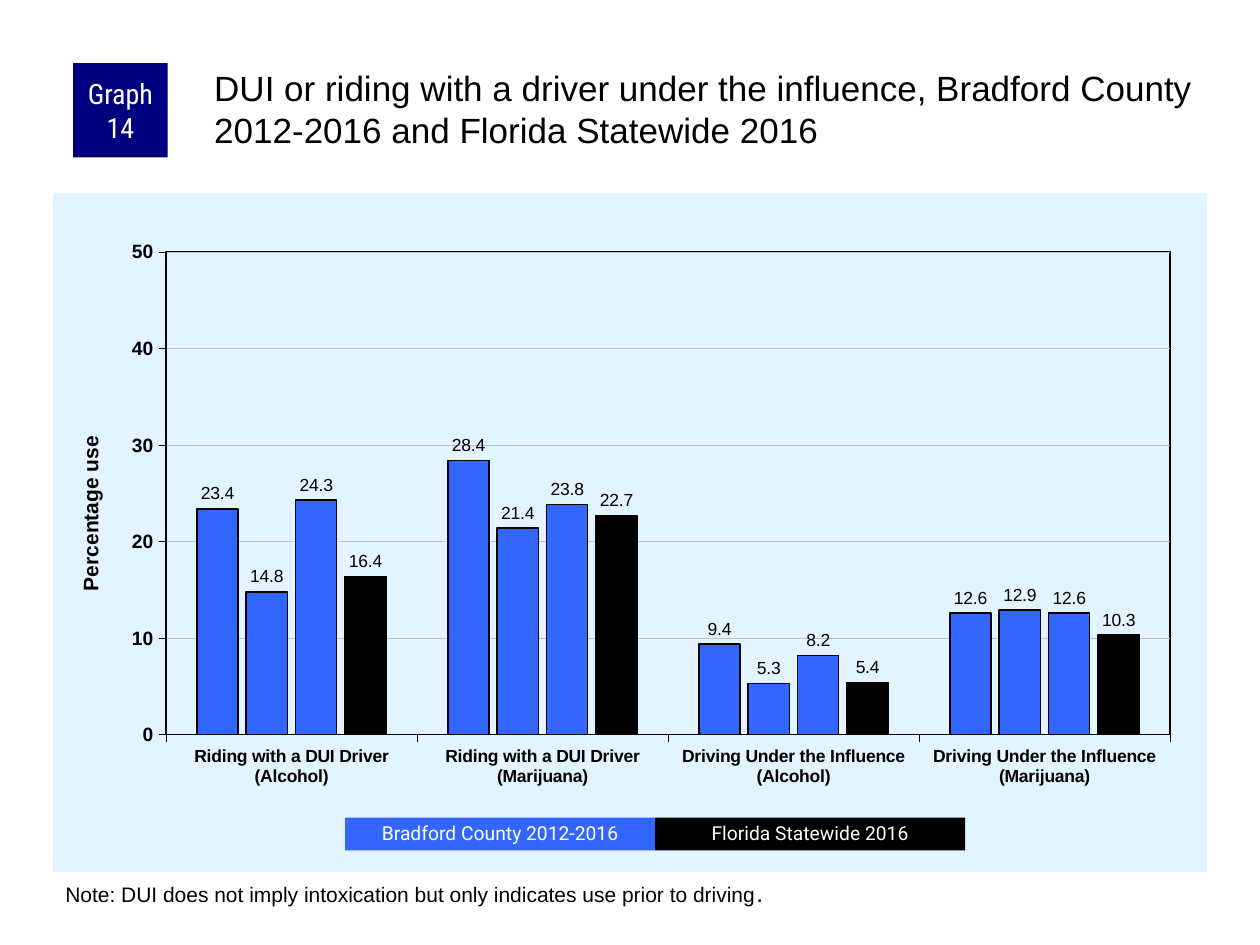
from dataclasses import dataclass

from lxml import etree
from pptx import Presentation
from pptx import util as u
from pptx.chart.data import CategoryChartData
from pptx.dml.color import RGBColor
from pptx.enum import chart as charts, shapes, text
from pptx.oxml import ns, parse_xml


@dataclass(frozen=True)
class Theme:
    panel: str = "E1F4FF"
    county: str = "3366FF"
    ink: str = "000000"
    badge: str = "000080"
    paper: str = "FFFFFF"
    grid: str = "C0C0C0"
    body_font: str = "Arial"
    badge_font: str = "Roboto Condensed"
    legend_font: str = "Roboto"
    title_size: float = 20
    badge_size: float = 16
    note_size: float = 12
    note_stop_size: float = 14
    legend_size: float = 11
    chart_size: float = 11.5
    axis_title_size: float = 12
    value_axis_size: float = 11
    label_size: float = 10


THEME = Theme()


@dataclass(frozen=True)
class Series:
    values: tuple
    color: str
    outline: float


@dataclass(frozen=True)
class Block:
    caption: str
    box: tuple
    fill: str
    font: str
    size: float
    margins: tuple = (0.1, 0.05)
    line_spacing: float = 1.0


CATEGORIES = (
    "Riding with a DUI Driver (Alcohol)",
    "Riding with a DUI Driver (Marijuana)",
    "Driving Under the Influence (Alcohol)",
    "Driving Under the Influence (Marijuana)",
)
SERIES = (
    Series((23.4, 28.4, 9.4, 12.6), THEME.county, 1),
    Series((14.8, 21.4, 5.3, 12.9), THEME.county, 1),
    Series((24.3, 23.8, 8.2, 12.6), THEME.county, 0.75),
    Series((16.4, 22.7, 5.4, 10.3), THEME.ink, 0.75),
)
LEGEND = (("Bradford County 2012-2016", THEME.county), ("Florida Statewide 2016", THEME.ink))
LEGEND_LEFT, LEGEND_TOP, LEGEND_WIDTH, LEGEND_HEIGHT = 2.74, 6.49, 2.46, 0.26
PLOT = {"x": 0.098, "y": 0.087, "w": 0.87, "h": 0.711}


def rgb(color: str) -> RGBColor:
    return RGBColor.from_string(color)


def inches(box: tuple) -> list:
    return [u.Inches(length) for length in box]


def style_font(font, name: str, size: float, color: str, bold: bool = False) -> None:
    font.name, font.size, font.bold = name, u.Pt(size), bold
    font.color.rgb = rgb(color)


def style_line(line, color: str, width: float) -> None:
    line.color.rgb = rgb(color)
    line.width = u.Pt(width)


def set_margins(frame, left: float, top: float, right: float, bottom: float) -> None:
    frame.margin_left, frame.margin_top, frame.margin_right, frame.margin_bottom = inches(
        (left, top, right, bottom))


def add_block(slide, block: Block) -> None:
    """Draw a filled rectangle with a centred caption."""
    shape = slide.shapes.add_shape(shapes.MSO_SHAPE.RECTANGLE, *inches(block.box))
    shape.shadow.inherit = False
    shape.fill.solid()
    shape.fill.fore_color.rgb = rgb(block.fill)
    shape.line.fill.background()
    frame = shape.text_frame
    frame.word_wrap = True
    frame.vertical_anchor = text.MSO_ANCHOR.MIDDLE
    set_margins(frame, *block.margins, *block.margins)
    frame.text = block.caption
    paragraph = frame.paragraphs[0]
    paragraph.alignment = text.PP_ALIGN.CENTER
    paragraph.line_spacing = block.line_spacing
    style_font(paragraph.runs[0].font, block.font, block.size, THEME.paper)


def place_title(slide, caption: str) -> None:
    title = slide.shapes.title
    title.left, title.top, title.width, title.height = inches((1.67, 0.5, 7.92, 0.83))
    frame = title.text_frame
    frame.word_wrap = True
    frame.auto_size = text.MSO_AUTO_SIZE.NONE
    frame.vertical_anchor = text.MSO_ANCHOR.TOP
    set_margins(frame, 0.03, 0.03, 0, 0)
    frame.text = caption
    paragraph = frame.paragraphs[0]
    paragraph.alignment = text.PP_ALIGN.LEFT
    style_font(paragraph.runs[0].font, THEME.body_font, THEME.title_size, THEME.ink)


def add_note(slide, parts: tuple) -> None:
    box = slide.shapes.add_textbox(*inches((0.42, 6.92, 9.17, 0.34)))
    box.text_frame.word_wrap = True
    box.text_frame.auto_size = text.MSO_AUTO_SIZE.SHAPE_TO_FIT_TEXT
    for wording, size in parts:
        run = box.text_frame.paragraphs[0].add_run()
        run.text = wording
        style_font(run.font, THEME.body_font, size, THEME.ink)


def area_properties(fill: str, line: str):
    return parse_xml(f'<c:spPr {ns.nsdecls("c", "a")}>{fill}{line}</c:spPr>')


def format_chart_areas(chart) -> None:
    """Set the panel fill, the plot frame and the inner plot position."""
    chart_node = chart.element.find(ns.qn("c:chart"))
    plot_area = chart_node.find(ns.qn("c:plotArea"))
    solid = '<a:solidFill><a:srgbClr val="{}"/></a:solidFill>'
    chart_node.addnext(area_properties(solid.format(THEME.panel), "<a:ln><a:noFill/></a:ln>"))
    frame_line = f'<a:ln w="{u.Pt(0.75)}">{solid.format(THEME.ink)}</a:ln>'
    plot_area.append(area_properties("<a:noFill/>", frame_line))

    for layout in plot_area.findall(ns.qn("c:layout")):
        plot_area.remove(layout)
    layout = etree.Element(ns.qn("c:layout"))
    manual = etree.SubElement(layout, ns.qn("c:manualLayout"))
    settings = {"layoutTarget": "inner", "xMode": "edge", "yMode": "edge", **PLOT}
    for name, value in settings.items():
        etree.SubElement(manual, ns.qn(f"c:{name}")).set("val", str(value))
    plot_area.insert(0, layout)


def format_axis(axis, size: float) -> None:
    axis.major_tick_mark = charts.XL_TICK_MARK.OUTSIDE
    axis.minor_tick_mark = charts.XL_TICK_MARK.NONE
    style_font(axis.tick_labels.font, THEME.body_font, size, THEME.ink, bold=True)
    style_line(axis.format.line, THEME.ink, 0.25)


def add_usage_chart(slide) -> None:
    data = CategoryChartData(number_format="0.0")
    data.categories = CATEGORIES
    for number, series in enumerate(SERIES, start=1):
        data.add_series(f"Series {number}", series.values)
    chart = slide.shapes.add_chart(
        charts.XL_CHART_TYPE.COLUMN_CLUSTERED, *inches((0.42, 1.53, 9.16, 5.39)), data).chart
    chart.has_legend = chart.has_title = False
    style_font(chart.font, THEME.body_font, THEME.chart_size, THEME.ink)
    format_chart_areas(chart)

    # Axes
    format_axis(chart.category_axis, THEME.label_size)
    axis = chart.value_axis
    format_axis(axis, THEME.value_axis_size)
    axis.minimum_scale, axis.maximum_scale, axis.major_unit = 0, 50, 10
    axis.tick_labels.number_format = "0"
    axis.tick_labels.number_format_is_linked = False
    style_line(axis.major_gridlines.format.line, THEME.grid, 0.25)
    axis.axis_title.text_frame.text = "Percentage use"
    title_run = axis.axis_title.text_frame.paragraphs[0].runs[0]
    style_font(title_run.font, THEME.body_font, THEME.axis_title_size, THEME.ink, bold=True)

    # Columns and their values
    plot = chart.plots[0]
    plot.gap_width, plot.overlap, plot.vary_by_categories = 150, -20, False
    for column, series in zip(plot.series, SERIES):
        column.format.fill.solid()
        column.format.fill.fore_color.rgb = rgb(series.color)
        style_line(column.format.line, THEME.ink, series.outline)
        labels = column.data_labels
        labels.show_value = True
        labels.number_format, labels.number_format_is_linked = "0.0", False
        labels.position = charts.XL_LABEL_POSITION.OUTSIDE_END
        style_font(labels.font, THEME.body_font, THEME.label_size, THEME.ink)


def main() -> None:
    presentation = Presentation()
    presentation.slide_width, presentation.slide_height = inches((10, 7.5))
    slide = presentation.slides.add_slide(presentation.slide_layouts.get_by_name("Title Only"))

    # Chart panel, then heading and note
    add_usage_chart(slide)
    add_block(slide, Block("Graph 14", (0.58, 0.5, 0.75, 0.75), THEME.badge,
                           THEME.badge_font, THEME.badge_size, (0.05, 0)))
    place_title(slide, "DUI or riding with a driver under the influence, "
                       "Bradford County 2012-2016 and Florida Statewide 2016")
    add_note(slide, (("Note: DUI does not imply intoxication but only indicates use prior to driving",
                      THEME.note_size), (".", THEME.note_stop_size)))

    # Colour key
    for index, (caption, color) in enumerate(LEGEND):
        box = (LEGEND_LEFT + index * LEGEND_WIDTH, LEGEND_TOP, LEGEND_WIDTH, LEGEND_HEIGHT)
        add_block(slide, Block(caption, box, color, THEME.legend_font, THEME.legend_size,
                               line_spacing=0.9))

    presentation.save("out.pptx")


if __name__ == "__main__":
    main()
